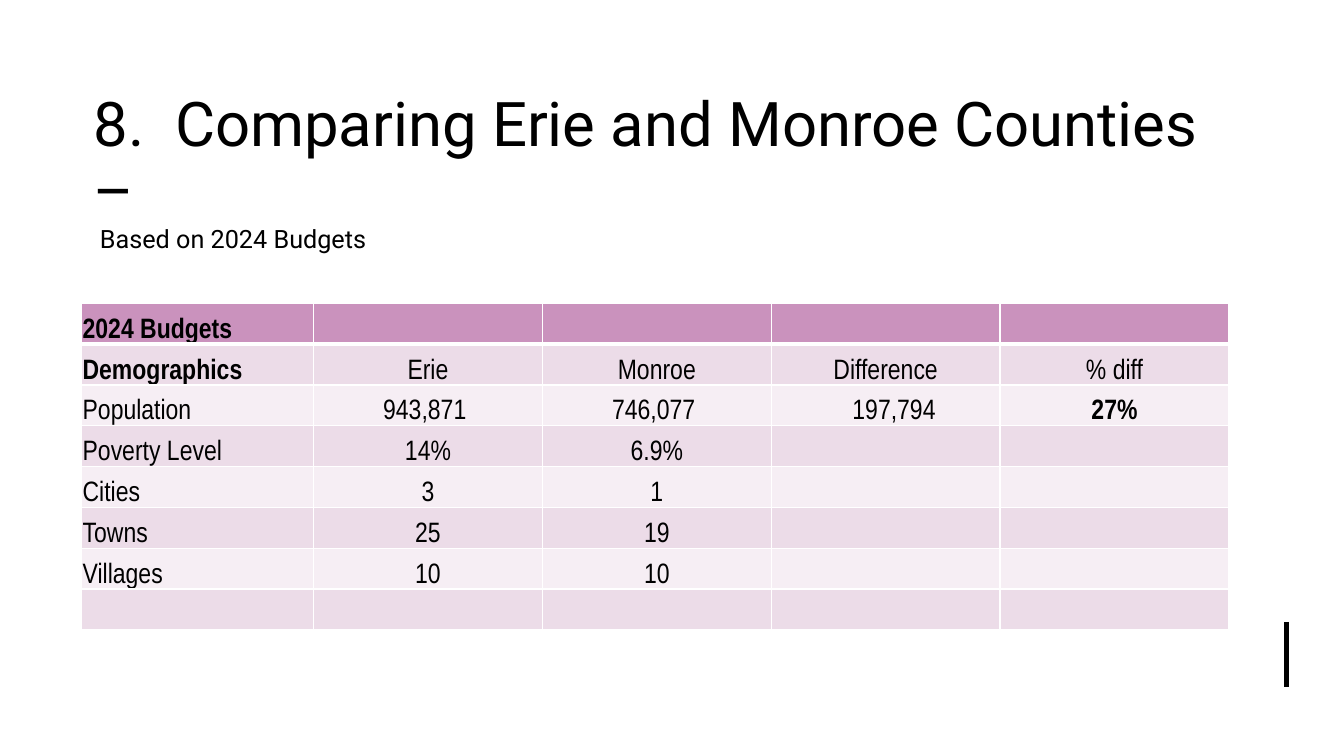
from lxml import etree
from pptx import Presentation
from pptx.dml.color import RGBColor
from pptx.enum.shapes import MSO_CONNECTOR
from pptx.enum.text import MSO_ANCHOR, MSO_AUTO_SIZE, PP_ALIGN
from pptx.oxml.ns import qn
from pptx.util import Inches, Pt

STRAIGHT = MSO_CONNECTOR.STRAIGHT
MIDDLE, BOTTOM = MSO_ANCHOR.MIDDLE, MSO_ANCHOR.BOTTOM
LEFT, CENTER = PP_ALIGN.LEFT, PP_ALIGN.CENTER
NO_AUTOFIT = MSO_AUTO_SIZE.NONE

BLACK, WHITE = "000000", "FFFFFF"
HEADER, BAND_DARK, BAND_LIGHT = "CA92BD", "ECDCE8", "F6EEF4"
COLUMN_WIDTHS = [2.3, 2.27, 2.27, 2.27, 2.27]
BUDGET_ROWS = [
    ["2024 Budgets", "", "", "", ""],
    ["Demographics", "Erie", "Monroe", "Difference", "% diff"],
    ["Population", "943,871 ", "746,077 ", "197,794 ", "27%"],
    ["Poverty Level", "14%", "6.9%", "", ""],
    ["Cities", "3", "1", "", ""],
    ["Towns", "25", "19", "", ""],
    ["Villages", "10", "10", "", ""],
    ["", "", "", "", ""],
]
BOLD_ENTRIES = {"2024 Budgets", "Demographics", "27%"}
INDENTS = {"197,794 ": 0.24}


def rgb(value):
    return RGBColor.from_string(value)


def format_run(run, font, size, bold=False):
    run.font.name = font
    run.font.size = Pt(size)
    run.font.bold = bold
    run.font.color.rgb = rgb(BLACK)


def set_borders(cell, bottom_width):
    properties = cell._tc.get_or_add_tcPr()
    for side, width in (("lnL", 1), ("lnR", 1), ("lnT", 1), ("lnB", bottom_width)):
        border = etree.SubElement(properties, qn(f"a:{side}"), w=str(Pt(width)))
        fill = etree.SubElement(border, qn("a:solidFill"))
        etree.SubElement(fill, qn("a:srgbClr"), val=WHITE)


def add_heading(slide, left, top, width, height):
    heading = slide.shapes.title
    heading.left, heading.top = Inches(left), Inches(top)
    heading.width, heading.height = Inches(width), Inches(height)
    frame = heading.text_frame
    frame.text = "8.  Comparing Erie and Monroe Counties –\v Based on 2024 Budgets"
    frame.word_wrap = True
    frame.auto_size = NO_AUTOFIT
    frame.vertical_anchor = MIDDLE
    paragraph = frame.paragraphs[0]
    paragraph.alignment = LEFT
    paragraph.line_spacing = 0.9
    for run, size in zip(paragraph.runs, (44, 18)):
        format_run(run, "Roboto", size)


def fill_cell(cell, entry, row, column):
    cell.text = entry
    cell.vertical_anchor = BOTTOM
    cell.margin_left = Inches(INDENTS.get(entry, 0.01))
    cell.margin_right = cell.margin_top = Inches(0.01)
    cell.margin_bottom = 0
    paragraph = cell.text_frame.paragraphs[0]
    paragraph.alignment = CENTER if column else LEFT
    for run in paragraph.runs:
        format_run(run, "Arial Narrow", 20, entry in BOLD_ENTRIES)
    set_borders(cell, 1 if row else 3)
    band = BAND_DARK if row % 2 else BAND_LIGHT
    cell.fill.solid()
    cell.fill.fore_color.rgb = rgb(band if row else HEADER)


def add_budget_table(slide, left, top, width, height):
    table = slide.shapes.add_table(
        len(BUDGET_ROWS), len(COLUMN_WIDTHS),
        Inches(left), Inches(top), Inches(width), Inches(height),
    ).table
    for column, column_width in zip(table.columns, COLUMN_WIDTHS):
        column.width = Inches(column_width)
    for row, entries in enumerate(BUDGET_ROWS):
        for column, entry in enumerate(entries):
            fill_cell(table.cell(row, column), entry, row, column)


def add_corner_rule(slide, left, top, height):
    rule = slide.shapes.add_connector(
        STRAIGHT, Inches(left), Inches(top), Inches(left), Inches(top + height)
    )
    rule.line.color.rgb = rgb(BLACK)
    rule.line.width = Pt(3)
    etree.SubElement(rule._element.spPr, qn("a:effectLst"))


def main():
    deck = Presentation()
    deck.slide_width, deck.slide_height = Inches(13.33), Inches(7.5)
    slide = deck.slides.add_slide(deck.slide_layouts[5])
    slide.background.fill.solid()
    slide.background.fill.fore_color.rgb = rgb(WHITE)
    add_corner_rule(slide, 12.76, 6.17, 0.65)
    add_heading(slide, 0.83, 0.94, 11.35, 1.57)
    add_budget_table(slide, 0.81, 3.01, sum(COLUMN_WIDTHS), 3.24)
    deck.save("out.pptx")


if __name__ == "__main__":
    main()
